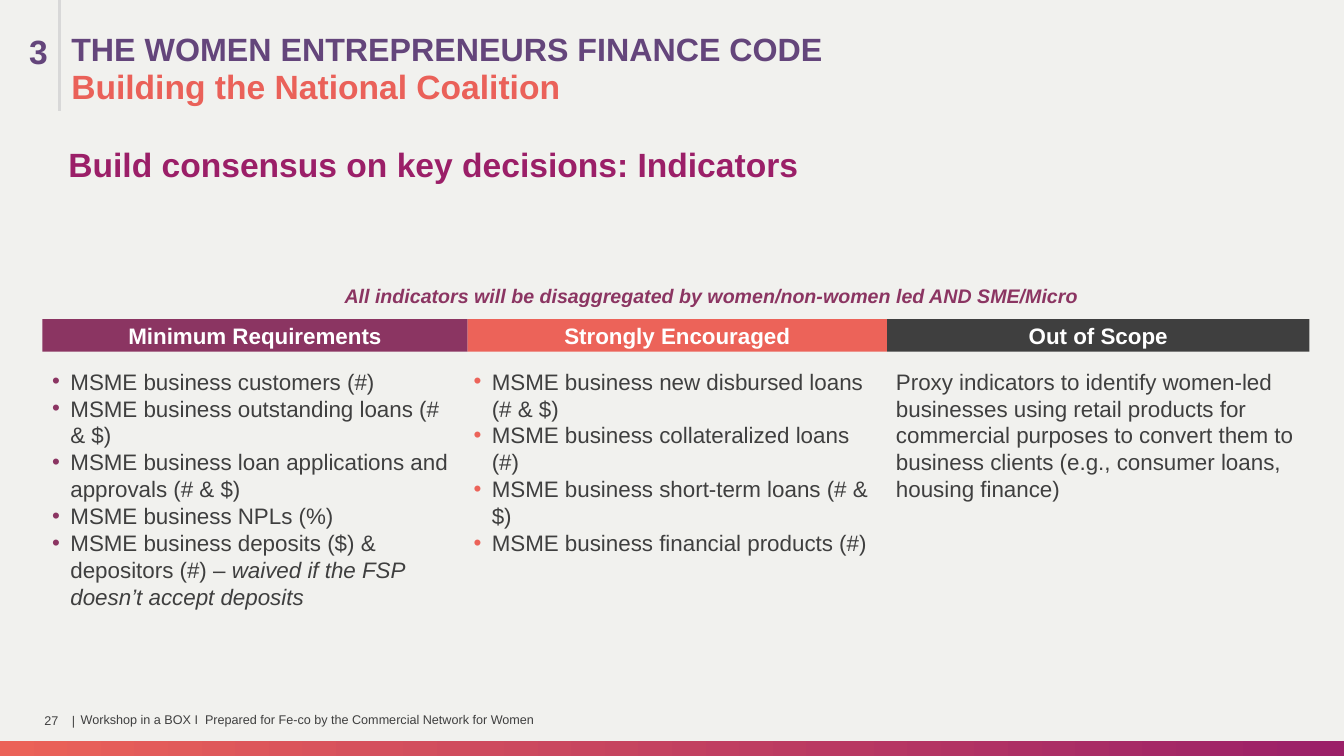
"""Build the slide on the indicators of the finance code."""
from dataclasses import dataclass

from lxml.etree import SubElement
from pptx import Presentation
from pptx.dml.color import RGBColor as RGB
from pptx.enum.shapes import MSO_CONNECTOR as CONN, MSO_SHAPE as SHAPE
from pptx.enum.text import MSO_ANCHOR as ANCHOR, PP_ALIGN as ALIGN
from pptx.oxml.ns import qn
from pptx.util import Pt

COLORS = {
    "paper": "F1F1EE", "plum": "8B3562", "coral": "EC6359", "dark": "3F3F3F",
    "white": "FFFFFF", "violet": "64457B", "salmon": "EA6159",
    "magenta": "9B1F68", "rule": "D8D8D8",
    "band_left": "EB6258", "band_right": "9B2068",
}
BODY = {"size": Pt(16), "name": "Arial"}
HEADING = {"size": Pt(16), "name": "Arial", "bold": True}
TITLE = {"size": Pt(24), "name": "Arial", "bold": True}
CODE_TITLE = {**TITLE, "size": Pt(23)}
NOTE = {"size": Pt(14), "name": "Arial", "bold": True, "italic": True}
FOOTER = {"size": Pt(9), "name": "Arial"}
INSETS = {"margin_left": Pt(7.2), "margin_right": Pt(7.2),
          "margin_top": Pt(3.6), "margin_bottom": Pt(3.6)}
FLUSH = {side: Pt(0) for side in INSETS}
BULLET_INDENT = Pt(13)


@dataclass
class Label:
    text: str
    box: tuple[float, float, float, float]
    color: str
    font: dict
    align: ALIGN = ALIGN.LEFT
    anchor: ANCHOR = ANCHOR.TOP
    insets: dict | None = None
    indent: float = 0


@dataclass
class Column:
    heading: str
    color: str
    head_left: float
    head_width: float
    body_left: float
    body_height: float
    items: list[str]
    bulleted: bool = True
    aside: str = ""


LABELS = [
    Label("All indicators will be disaggregated by women/non-women led AND SME/Micro",
          (164.2, 199.4, 688.3, 23), "plum", NOTE, ALIGN.CENTER, ANCHOR.MIDDLE),
    Label("3", (0, 18.7, 64.8, 36), "violet", TITLE, indent=13.7),
    Label("THE WOMEN ENTREPRENEURS FINANCE CODE",
          (30.2, 17.3, 877.7, 36), "violet", CODE_TITLE, indent=13.7),
    Label("Building the National Coalition",
          (42.5, 43.2, 801.4, 36), "salmon", TITLE, indent=1.4),
    Label("Build consensus on key decisions: Indicators",
          (41.8, 99.4, 866.2, 36), "magenta", TITLE),
    Label("27", (31.7, 500.4, 15.8, 28.8), "dark", FOOTER,
          anchor=ANCHOR.MIDDLE, insets=FLUSH),
    Label("|", (49, 500.4, 7.2, 28.8), "dark", FOOTER,
          ALIGN.CENTER, ANCHOR.MIDDLE, FLUSH),
    Label("Workshop in a BOX I  Prepared for Fe-co by the Commercial Network for Women",
          (57.6, 499.7, 411.1, 28.8), "dark", FOOTER,
          anchor=ANCHOR.MIDDLE, insets=FLUSH),
]
COLUMNS = [
    Column("Minimum Requirements", "plum", 30.2, 303.9, 30.2, 229, [
        "MSME business customers (#)",
        "MSME business outstanding loans (# & $)",
        "MSME business loan applications and approvals (# & $)",
        "MSME business NPLs (%)",
        "MSME business deposits ($) & depositors (#) – ",
    ], aside="waived if the FSP doesn’t accept deposits"),
    Column("Strongly Encouraged", "coral", 334.1, 299.5, 331.2, 272, [
        "MSME business new disbursed loans (# & $)",
        "MSME business collateralized loans (#)",
        "MSME business short-term loans (# & $)",
        "MSME business financial products (#)",
    ]),
    Column("Out of Scope", "dark", 633.6, 301.7, 632.9, 262, [
        "Proxy indicators to identify women-led businesses using retail "
        "products for commercial purposes to convert them to business "
        "clients (e.g., consumer loans, housing finance)",
    ], bulleted=False),
]


def rgb(name: str) -> RGB:
    """Return a named colour."""
    return RGB.from_string(COLORS[name])


def set_all(target, values: dict) -> None:
    """Set each attribute named in values."""
    for key, value in values.items():
        setattr(target, key, value)


def add_run(p, text: str, font: dict, color: str) -> None:
    """Append a formatted run to a paragraph."""
    r = p.add_run()
    r.text = text
    set_all(r.font, font)
    r.font.color.rgb = rgb(color)


def set_bullet(p, color: str) -> None:
    """Give a paragraph a hanging coloured bullet."""
    pPr = p._p.get_or_add_pPr()
    pPr.set("marL", str(BULLET_INDENT))
    pPr.set("indent", str(-BULLET_INDENT))
    clr = SubElement(pPr, qn("a:buClr"))
    SubElement(clr, qn("a:srgbClr"), val=COLORS[color])
    SubElement(pPr, qn("a:buFont"), typeface="Arial")
    SubElement(pPr, qn("a:buChar"), char="•")


def add_text(s, box: tuple, insets: dict = INSETS, anchor: ANCHOR = ANCHOR.TOP):
    """Add an empty wrapping text box and return its frame."""
    tf = s.shapes.add_textbox(*map(Pt, box)).text_frame
    set_all(tf, {"word_wrap": True, "vertical_anchor": anchor, **insets})
    return tf


def add_rect(s, box: tuple):
    """Add a rectangle without line or shadow."""
    sp = s.shapes.add_shape(SHAPE.RECTANGLE, *map(Pt, box))
    sp.shadow.inherit = False
    sp.line.fill.background()
    return sp


def add_label(s, label: Label) -> None:
    """Draw a one-paragraph label."""
    p = add_text(s, label.box, label.insets or INSETS, label.anchor).paragraphs[0]
    p.alignment = label.align
    if label.indent:
        p._p.get_or_add_pPr().set("marL", str(Pt(label.indent)))
    add_run(p, label.text, label.font, label.color)


def add_column(s, col: Column) -> None:
    """Draw a column's heading bar and its items."""
    sp = add_rect(s, (col.head_left, 228, col.head_width, 23.3))
    sp.fill.solid()
    sp.fill.fore_color.rgb = rgb(col.color)
    tf = sp.text_frame
    set_all(tf, {"word_wrap": True, "vertical_anchor": ANCHOR.MIDDLE, **INSETS})
    tf.paragraphs[0].alignment = ALIGN.CENTER
    add_run(tf.paragraphs[0], col.heading, HEADING, "white")

    tf = add_text(s, (col.body_left, 259.2, 301.7, col.body_height))
    for i, item in enumerate(col.items):
        p = tf.add_paragraph() if i else tf.paragraphs[0]
        if col.bulleted:
            set_bullet(p, col.color)
        add_run(p, item, BODY, "dark")
    if col.aside:
        add_run(p, col.aside, {**BODY, "italic": True}, "dark")


def add_band(s) -> None:
    """Draw the gradient band along the bottom edge."""
    fill = add_rect(s, (0, 529.2, 960, 10.8)).fill
    fill.gradient()
    fill.gradient_angle = 0
    for stop, name in zip(fill.gradient_stops, ("band_left", "band_right")):
        stop.color.rgb = rgb(name)


def add_rule(s) -> None:
    """Draw the vertical rule beside the section number."""
    rule = s.shapes.add_connector(CONN.STRAIGHT, *map(Pt, (42.5, 0, 42.5, 79.2)))
    rule.line.color.rgb = rgb("rule")
    rule.line.width = Pt(2.25)
    SubElement(rule._element.spPr, qn("a:effectLst"))


def main() -> None:
    """Build and save the slide."""
    prs = Presentation()
    prs.slide_width, prs.slide_height = Pt(960), Pt(540)
    s = prs.slides.add_slide(prs.slide_layouts[6])
    s.background.fill.solid()
    s.background.fill.fore_color.rgb = rgb("paper")
    add_band(s)
    for col in COLUMNS:
        add_column(s, col)
    add_rule(s)
    for label in LABELS:
        add_label(s, label)
    prs.save("out.pptx")


if __name__ == "__main__":
    main()
